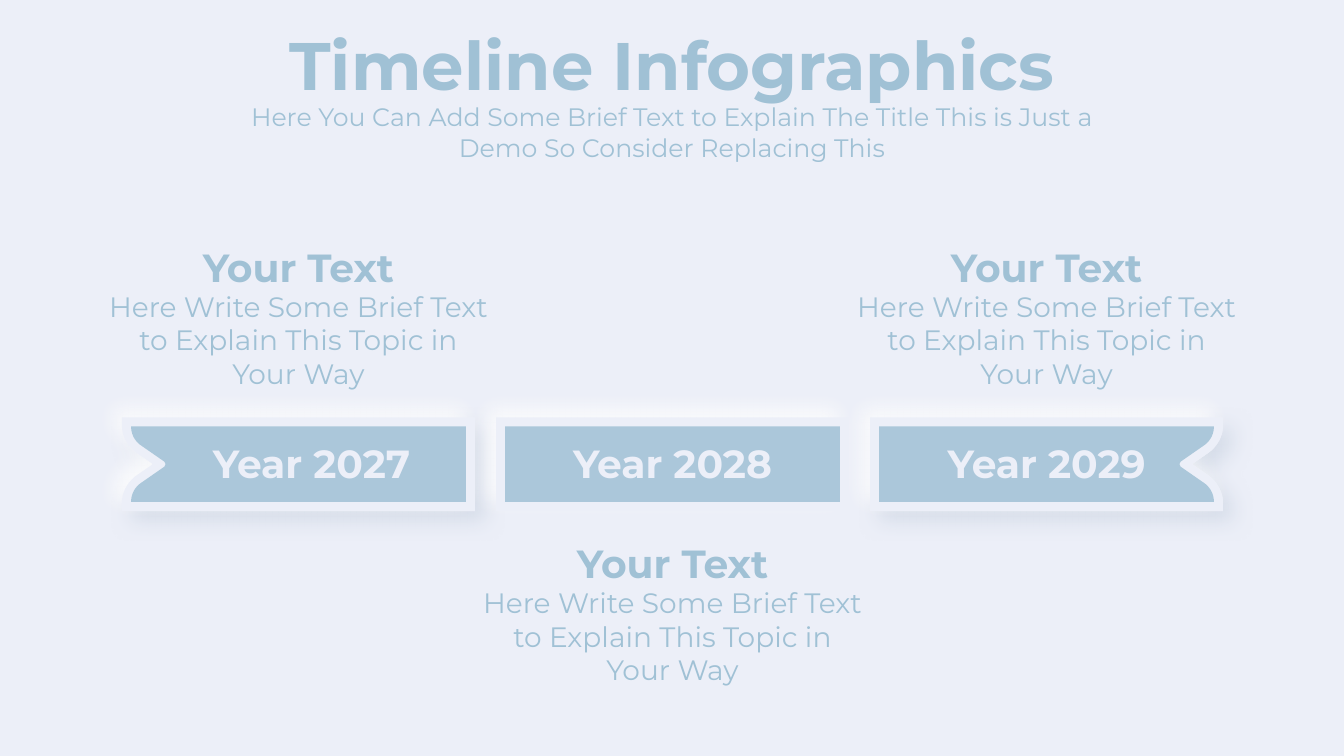
from lxml.etree import SubElement
from pptx import Presentation
from pptx.dml.color import RGBColor
from pptx.enum.shapes import MSO_SHAPE
from pptx.enum.text import MSO_AUTO_SIZE, PP_ALIGN
from pptx.oxml.ns import qn
from pptx.util import Inches, Pt

PALE, BLUE, SHADE, WHITE = "ECEFF8", "A0C1D5", "D1D9E6", "FFFFFF"
rgb = RGBColor.from_string

prs = Presentation()
prs.slide_width, prs.slide_height = Inches(13.33), Inches(7.5)
s = prs.slides.add_slide(prs.slide_layouts[6])
s.background.fill.solid()
s.background.fill.fore_color.rgb = rgb(PALE)


def add_text(text, x, y, w, h, size, color=BLUE, bold=False):
    tf = s.shapes.add_textbox(Inches(x), Inches(y), Inches(w), Inches(h)).text_frame
    tf.word_wrap = True
    tf.auto_size = MSO_AUTO_SIZE.SHAPE_TO_FIT_TEXT
    p = tf.paragraphs[0]
    p.text, p.alignment = text, PP_ALIGN.CENTER
    p.font.name, p.font.size, p.font.bold = "Montserrat", Pt(size), bold
    p.font.color.rgb = rgb(color)


def add_band(x, y, w, h, notch, side):
    if side == "none":
        return s.shapes.add_shape(MSO_SHAPE.RECTANGLE, Inches(x), Inches(y), Inches(w), Inches(h))
    a, b, c, d = notch[:4]
    upper = [(0, 0)]
    for t in (i / 12 for i in range(13)):
        k = (1 - t) ** 3, 3 * t * (1 - t) ** 2, 3 * t * t * (1 - t), t ** 3
        upper.append(tuple(sum(m * q[i] for m, q in zip(k, (a, b, c, d))) for i in (0, 1)))
    upper += notch[4:]
    outline = upper + [(px, h - py) for px, py in reversed(upper)] + [(w, h), (w, 0)]
    if side == "right":
        outline = [(w - px, py) for px, py in outline]
    pts = [(Inches(x + px), Inches(y + py)) for px, py in outline]
    fb = s.shapes.build_freeform(*pts[0])
    fb.add_line_segments(pts[1:], close=True)
    return fb.convert_to_shape()


title_x, title_w = 2.3, 8.73
add_text("Timeline Infographics", title_x, 0.18, title_w, 0.91, 48, bold=True)
add_text("Here You Can Add Some Brief Text to Explain The Title This is Just a Demo "
         "So Consider Replacing This", title_x, 0.96, title_w, 0.71, 18)

LEFT, TOP, PITCH, W, H, RIM = 1.21, 4.14, 3.71, 3.5, 0.93, 0.09
OUTER = [(0, 0.09), (0, 0.19), (0.06, 0.29), (0.14, 0.35), (0.3, 0.46)]
INNER = [(0, 0), (0, 0.08), (0.04, 0.15), (0.1, 0.19), (0.33, 0.35), (0.34, 0.37)]
DARK_SHADOW, LIGHT_SHADOW = (SHADE, 45, "tl"), (WHITE, 225, "br")

years = [
    ("Year 2027", "left", 2.36, 0.13),
    ("Year 2028", "none", 5.3, 0),
    ("Year 2029", "right", 2.36, 0),
]
for col, (year, side, caption_y, shift) in enumerate(years):
    x = LEFT + col * PITCH
    mid = x + W / 2
    shadows = [LIGHT_SHADOW] if side == "none" else [DARK_SHADOW, LIGHT_SHADOW]
    for shadow in shadows + [None]:
        if shadow:
            sp = add_band(x, TOP, W, H, OUTER, side)
        else:
            sp = add_band(x + RIM, TOP + RIM, W - 2 * RIM, H - 2 * RIM, INNER, side)
        sp.fill.solid()
        sp.fill.fore_color.rgb = rgb(PALE if shadow else BLUE)
        sp.line.fill.background()
        sp.shadow.inherit = False
        spPr = sp.element.spPr
        if shadow:
            color, angle, align = shadow
            outer = SubElement(spPr.find(qn("a:effectLst")), qn("a:outerShdw"),
                               blurRad=str(Pt(15)), dist=str(Pt(10)),
                               dir=str(angle * 60000), algn=align, rotWithShape="0")
            clr, alpha = SubElement(outer, qn("a:srgbClr"), val=color), 80
        else:
            clr, alpha = spPr.find(qn("a:solidFill"))[0], 85
        SubElement(clr, qn("a:alpha"), val=str(alpha * 1000))
    add_text(year, mid - 1.31 + shift, 4.31, 2.62, 0.57, 28, PALE, True)
    add_text("Your Text", mid - 1.65, caption_y, 3.3, 0.57, 28, bold=True)
    add_text("Here Write Some Brief Text to Explain This Topic in Your Way",
             mid - 1.99, caption_y + 0.46, 3.98, 1.11, 20)

prs.save("out.pptx")
